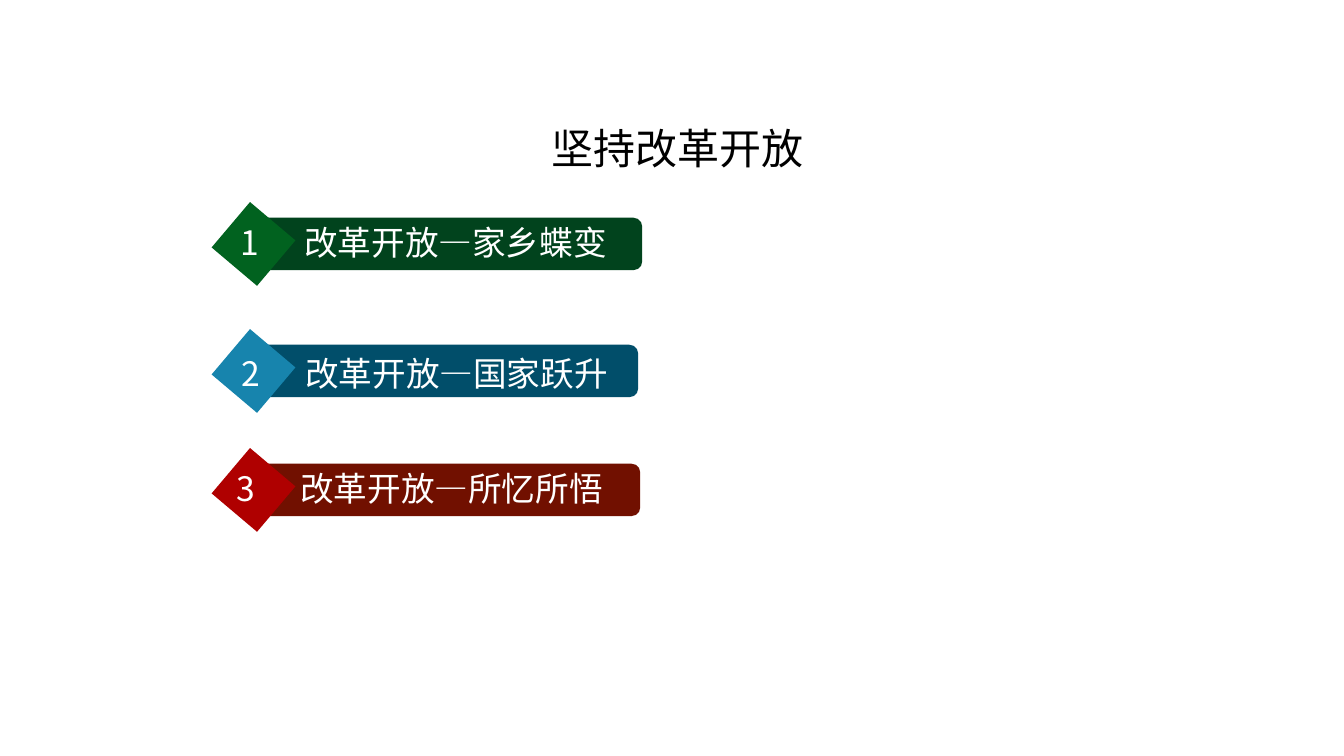
from pptx import Presentation
from pptx.dml.color import RGBColor
from pptx.enum import shapes, text
from pptx.oxml import ns
from pptx.util import Inches, Pt
from lxml import etree

FONT = "Noto Sans CJK SC"
WHITE = RGBColor(0xFF, 0xFF, 0xFF)
BLACK = RGBColor(0, 0, 0)
TITLE = "坚持改革开放"

# number, label, bar top, bar width, text left, text top, bar colour, badge colour
ROWS = [
    ("1", "改革开放—家乡蝶变", 2.16, 3.94, 2.29, 2.15,
     RGBColor(0x01, 0x43, 0x1D), RGBColor(0x01, 0x62, 0x1F)),
    ("2", "改革开放—国家跃升", 3.42, 3.9, 2.3, 3.45,
     RGBColor(0x01, 0x4E, 0x6A), RGBColor(0x17, 0x84, 0xAD)),
    ("3", "改革开放—所忆所悟", 4.6, 3.92, 2.25, 4.59,
     RGBColor(0x71, 0x10, 0x00), RGBColor(0xAF, 0x00, 0x00)),
]
BAR_X, BAR_H = 2.43, 0.52
BADGE_X, BADGE = 2.22, 0.59
TAB = 0.63

deck = Presentation()
deck.slide_width, deck.slide_height = Inches(13.33), Inches(7.5)
slide = deck.slides.add_slide(deck.slide_layouts[6])


def add_block(kind, x, y, w, h, color):
    block = slide.shapes.add_shape(kind, *map(Inches, (x, y, w, h)))
    block.shadow.inherit = False
    block.fill.solid()
    block.fill.fore_color.rgb = color
    block.line.fill.background()
    return block


def add_text(words, x, y, w, h, size, color):
    box = slide.shapes.add_textbox(*map(Inches, (x, y, w, h)))
    box.text_frame.word_wrap = True
    para = box.text_frame.paragraphs[0]
    run = para.add_run()
    run.text = words
    run.font.size = Pt(size)
    run.font.color.rgb = color
    run.font.name = FONT
    etree.SubElement(run.font._element, ns.qn("a:ea"), typeface=FONT)
    return box.text_frame, para


def set_tab(para, pos):
    tabs = etree.SubElement(para._p.get_or_add_pPr(), ns.qn("a:tabLst"))
    etree.SubElement(tabs, ns.qn("a:tab"), pos=str(Inches(pos)), algn="l")


frame, para = add_text(TITLE, 2.23, 1.18, 8.98, 0.63, 30, BLACK)
frame.vertical_anchor = text.MSO_ANCHOR.MIDDLE
para.alignment = text.PP_ALIGN.CENTER
para.line_spacing = 0.9

for num, label, top, width, x, y, dark, light in ROWS:
    add_block(shapes.MSO_SHAPE.ROUNDED_RECTANGLE, BAR_X, top, width, BAR_H, dark)
    mid = top + BAR_H / 2
    badge = add_block(shapes.MSO_SHAPE.RECTANGLE, BADGE_X, mid - BADGE / 2,
                      BADGE, BADGE, light)
    badge.rotation = 310.2
    frame, para = add_text(f"{num}\t{label}", x, y, 5.16, 0.5, 24, WHITE)
    set_tab(para, TAB)

deck.save("out.pptx")
